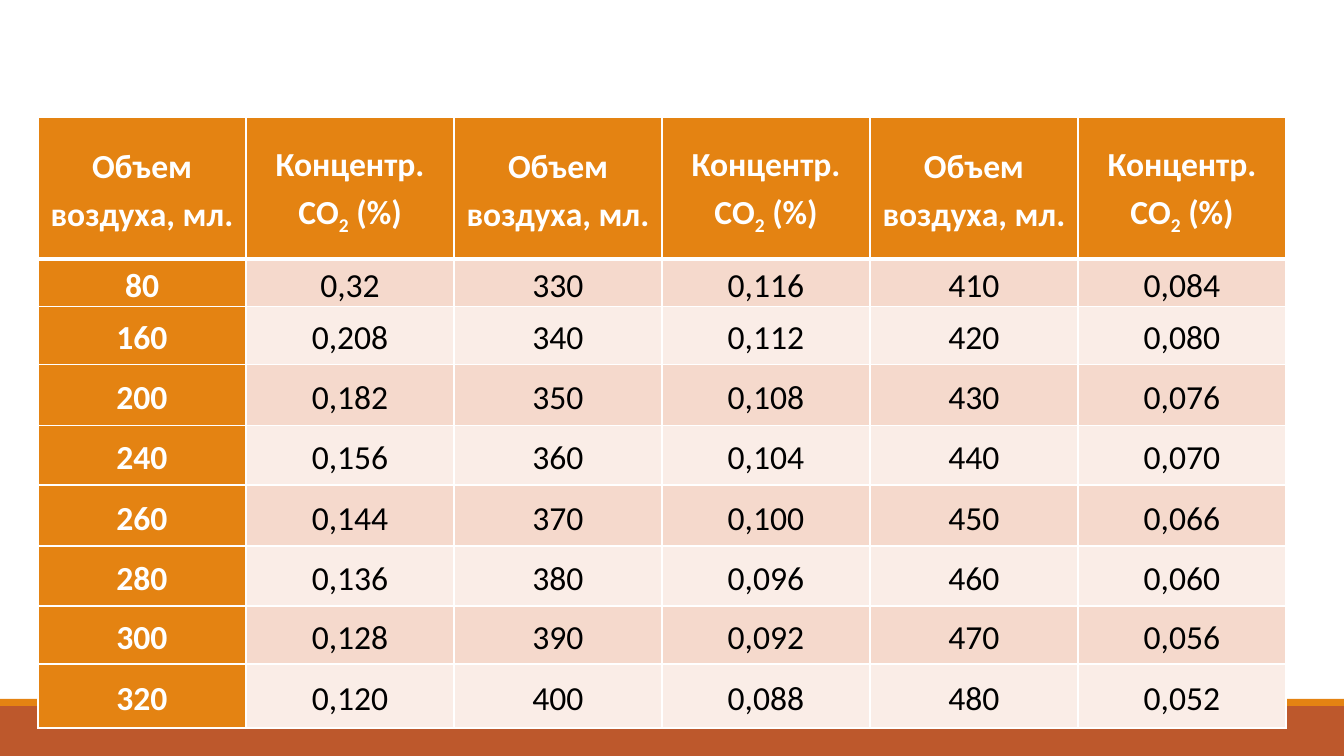
from lxml import etree
from pptx import Presentation
from pptx.dml.color import RGBColor
from pptx.enum.shapes import MSO_SHAPE
from pptx.enum.text import MSO_ANCHOR, PP_ALIGN
from pptx.oxml.ns import qn
from pptx.util import Emu, Pt

RECTANGLE = MSO_SHAPE.RECTANGLE
CENTER = PP_ALIGN.CENTER
MIDDLE = MSO_ANCHOR.MIDDLE

EMU_PER_PX = 914400 / 100.8
SLIDE_WIDTH, SLIDE_HEIGHT = 1344, 756
TABLE_LEFT, TABLE_TOP = 38, 117
COLUMN_WIDTH = 208
ROW_HEIGHTS = [142, 46, 58, 61, 60, 61, 60, 58, 64]
CELL_INSET = 7

ORANGE, RUST = "E48312", "BD582C"
WHITE, BLACK = "FFFFFF", "000000"
BANDS = ["F5D9CC", "FAEDE7"]

VOLUME_HEADING = [("Объем воздуха, мл.", 0)]
CO2_HEADING = [("Концентр. СО", 0), ("2", -25000), (" (%)", 0)]
MEASUREMENTS = [
    ["80", "0,32", "330", "0,116", "410", "0,084"],
    ["160", "0,208", "340", "0,112", "420", "0,080"],
    ["200", "0,182", "350", "0,108", "430", "0,076"],
    ["240", "0,156", "360", "0,104", "440", "0,070"],
    ["260", "0,144", "370", "0,100", "450", "0,066"],
    ["280", "0,136", "380", "0,096", "460", "0,060"],
    ["300", "0,128", "390", "0,092", "470", "0,056"],
    ["320", "0,120", "400", "0,088", "480", "0,052"],
]


def px(length):
    return Emu(round(length * EMU_PER_PX))


def color(hex_value):
    return RGBColor.from_string(hex_value)


def add_band(slide, top, height, fill):
    band = slide.shapes.add_shape(RECTANGLE, 0, px(top), px(SLIDE_WIDTH), px(height))
    band.shadow.inherit = False
    band.fill.solid()
    band.fill.fore_color.rgb = color(fill)
    band.line.fill.background()


def write_text(frame, parts, size=24, font="Calibri", ink=BLACK, bold=False):
    paragraph = frame.paragraphs[0]
    paragraph.alignment = CENTER
    paragraph.line_spacing = 1.15
    for text, baseline in parts:
        run = paragraph.add_run()
        run.text = text
        run.font.size = Pt(size)
        run.font.name = font
        run.font.bold = bold
        run.font.color.rgb = color(ink)
        if baseline:
            run.font._element.set("baseline", str(baseline))


def add_border(cell, side, points):
    properties = cell._tc.get_or_add_tcPr()
    border = etree.SubElement(properties, qn(f"a:ln{side}"), w=str(Pt(points)))
    fill = etree.SubElement(border, qn("a:solidFill"))
    etree.SubElement(fill, qn("a:srgbClr"), val=WHITE)


def format_cell(cell, parts, fill, ink, bold, top_border, bottom_border):
    cell.margin_left = cell.margin_right = px(CELL_INSET)
    cell.margin_top = cell.margin_bottom = 0
    cell.vertical_anchor = MIDDLE
    for side, points in zip("LRTB", [1, 1, top_border, bottom_border]):
        add_border(cell, side, points)
    cell.fill.solid()
    cell.fill.fore_color.rgb = color(fill)
    write_text(cell.text_frame, parts, ink=ink, bold=bold)


def add_measurement_table(slide):
    headings = [VOLUME_HEADING, CO2_HEADING] * 3
    rows = [headings] + [[[(value, 0)] for value in row] for row in MEASUREMENTS]
    table = slide.shapes.add_table(
        len(rows), len(headings), px(TABLE_LEFT), px(TABLE_TOP),
        px(COLUMN_WIDTH * len(headings)), px(sum(ROW_HEIGHTS)),
    ).table
    table.horz_banding = False
    for column in table.columns:
        column.width = px(COLUMN_WIDTH)
    for r, (row, height) in enumerate(zip(rows, ROW_HEIGHTS)):
        table.rows[r].height = px(height)
        for c, parts in enumerate(row):
            heading = r == 0 or c == 0
            format_cell(
                table.cell(r, c), parts,
                fill=ORANGE if heading else BANDS[(r - 1) % 2],
                ink=WHITE if heading else BLACK,
                bold=heading,
                top_border=3 if r == 1 else 1,
                bottom_border=3 if r == 0 else 1,
            )


def main():
    presentation = Presentation()
    presentation.slide_width = px(SLIDE_WIDTH)
    presentation.slide_height = px(SLIDE_HEIGHT)
    slide = presentation.slides.add_slide(presentation.slide_layouts[6])
    add_band(slide, 706, 50, RUST)
    add_band(slide, 699, 7, ORANGE)
    add_measurement_table(slide)
    presentation.save("out.pptx")


if __name__ == "__main__":
    main()
